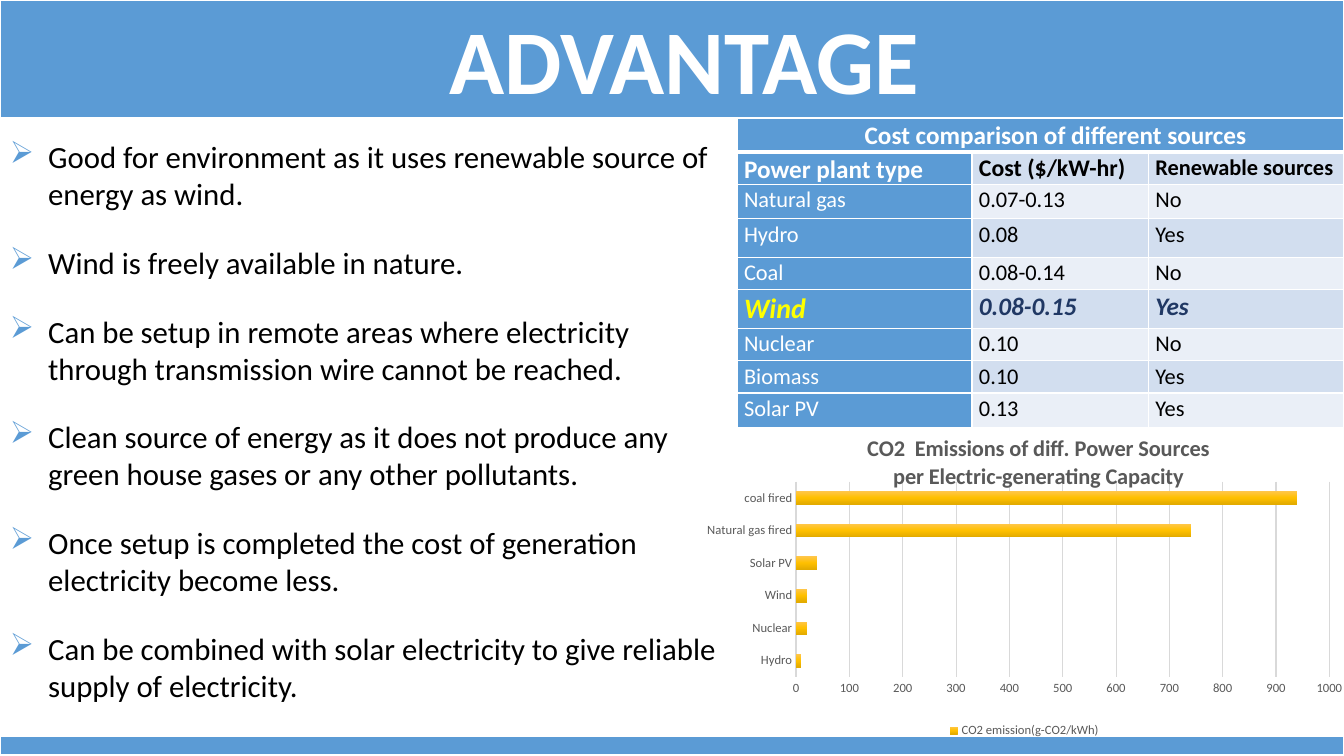
from copy import deepcopy

from lxml import etree
from pptx import Presentation
from pptx import util as u
from pptx.chart.data import CategoryChartData
from pptx.dml.color import RGBColor
from pptx.enum import chart as ch, text as tx
from pptx.oxml.ns import qn

THEME = {
    "font": "Calibri",
    "blue": "5B9BD5", "pale": "EAEFF7", "mid": "D2DEEF", "white": "FFFFFF",
    "black": "000000", "navy": "203864", "yellow": "FFFF00",
    "gray": "595959", "grid": "D9D9D9",
    "gold": [(0, "FFC64B"), (0.5, "FFC000"), (1, "E3AB00")],
    "title": 65, "body": 22, "head": 18, "cost": 17, "cell": 16,
    "wind": 20, "label": 9,
}
TITLE = "ADVANTAGE"
# Each point with the height of its box
POINTS = [
    ("Good for environment as it uses renewable source of energy as wind.", 0.84),
    ("Wind is freely available in nature.", 0.47),
    ("Can be setup in remote areas where electricity through transmission "
     "wire cannot be reached.", 0.84),
    ("Clean source of energy as it does not produce any green house gases "
     "or any other pollutants.", 0.84),
    ("Once setup is completed the cost of generation electricity become less.", 0.84),
    ("Can be combined with solar electricity to give reliable supply of "
     "electricity.", 0.84),
]
COSTS = [
    ("Cost comparison of different sources", "", ""),
    ("Power plant type", "Cost ($/kW-hr)", "Renewable sources"),
    ("Natural gas", "0.07-0.13", "No"),
    ("Hydro", "0.08", "Yes"),
    ("Coal", "0.08-0.14", "No"),
    ("Wind", "0.08-0.15", "Yes"),
    ("Nuclear", "0.10", "No"),
    ("Biomass", "0.10", "Yes"),
    ("Solar PV", "0.13", "Yes"),
]
COLS = [2.33, 1.75, 1.94]
ROWS = [0.34, 0.32, 0.34, 0.38, 0.32, 0.39, 0.32, 0.32, 0.34]
CO2_TITLE = ["CO2  Emissions of diff. Power Sources",
             "per Electric-generating Capacity"]
CO2_NAME = "CO2 emission(g-CO2/kWh)"
CO2 = {"Hydro": 10, "Nuclear": 20, "Wind": 20, "Solar PV": 40,
       "Natural gas fired": 740, "coal fired": 940}


def rgb(name):
    return RGBColor.from_string(THEME.get(name, name))


def style(font, size, color, bold=False, italic=False):
    font.name, font.size = THEME["font"], u.Pt(THEME[size])
    font.bold, font.italic = bold, italic
    font.color.rgb = rgb(color)


def edge(cell, base):
    """Draw white borders, with a bottom line of base points."""
    props = cell._tc.get_or_add_tcPr()
    for side, width in zip("LRTB", (1, 1, 1, base)):
        line = etree.SubElement(props, qn(f"a:ln{side}"), w=str(u.Pt(width)))
        fill = etree.SubElement(line, qn("a:solidFill"))
        etree.SubElement(fill, qn("a:srgbClr"), val=THEME["white"])


def paint(cell, fill, words, look, base=1, shift=0):
    """Fill a cell; shift moves centred text to the right."""
    edge(cell, base)
    cell.fill.solid()
    cell.fill.fore_color.rgb = rgb(fill)
    cell.margin_left = u.Inches(0.07 + 2 * shift)
    cell.margin_right = u.Inches(0.07)
    cell.margin_top = cell.margin_bottom = 0
    para = cell.text_frame.paragraphs[0]
    if not words:
        etree.SubElement(para._p, qn("a:endParaRPr"), sz="500")
        return
    para.text = words
    para.line_spacing = 1.07
    if shift:
        para.alignment = tx.PP_ALIGN.CENTER
    style(para.runs[0].font, *look)


def grid(slide, left, top, cols, rows):
    frame = slide.shapes.add_table(
        len(rows), len(cols), u.Inches(left), u.Inches(top),
        u.Inches(sum(cols)), u.Inches(sum(rows)))
    table = frame.table
    table.horz_banding = False
    for col, width in zip(table.columns, cols):
        col.width = u.Inches(width)
    for row, height in zip(table.rows, rows):
        row.height = u.Inches(height)
    return table


def look_for(row, col):
    """Choose the type of one cell in the cost table."""
    if row == 1:
        return [("head", "white", True), ("cost", "black", True),
                ("cell", "black", True)][col]
    if COSTS[row][0] == "Wind":
        return (("head", "navy", True, True) if col
                else ("wind", "yellow", True, True))
    return "cell", "black" if col else "white"


def add_costs(slide):
    table = grid(slide, 7.31, 1.17, COLS, ROWS)
    table.cell(0, 0).merge(table.cell(0, len(COLS) - 1))
    paint(table.cell(0, 0), "blue", COSTS[0][0], ("head", "white", True), 3, 0.15)
    for row, words in enumerate(COSTS[1:], 1):
        band = "mid" if row % 2 else "pale"
        for col, word in enumerate(words):
            paint(table.cell(row, col), band if col else "blue", word,
                  look_for(row, col))


def add_points(slide):
    top, gap = 1.32, 0.21
    for words, height in POINTS:
        box = slide.shapes.add_textbox(
            u.Inches(0), u.Inches(top), u.Inches(7.2), u.Inches(height))
        box.text_frame.word_wrap = True
        para = box.text_frame.paragraphs[0]
        para.text = words
        props = para._p.get_or_add_pPr()
        props.set("marL", str(u.Inches(0.38)))
        props.set("indent", str(u.Inches(-0.38)))
        tint = etree.SubElement(props, qn("a:buClr"))
        etree.SubElement(tint, qn("a:srgbClr"), val=THEME["blue"])
        etree.SubElement(props, qn("a:buChar"), char="➢")
        style(para.runs[0].font, "body", "black")
        top += height + gap


def place(node, after, spots):
    """Give a chart part a manual layout."""
    for old in node.findall(qn("c:layout")):
        node.remove(old)
    layout = etree.Element(qn("c:layout"))
    manual = etree.SubElement(layout, qn("c:manualLayout"))
    for tag, value in spots.items():
        etree.SubElement(manual, qn(f"c:{tag}"), val=str(value))
    if after is None:
        node.insert(0, layout)
    else:
        after.addnext(layout)


def add_chart(slide):
    data = CategoryChartData()
    data.categories = list(CO2)
    data.add_series(CO2_NAME, list(CO2.values()))
    chart = slide.shapes.add_chart(
        ch.XL_CHART_TYPE.BAR_STACKED, u.Inches(6.85), u.Inches(4.18),
        u.Inches(6.62), u.Inches(3.18), data).chart
    style(chart.font, "label", "gray")

    frame = chart.chart_title.text_frame
    frame.text = "\n".join(CO2_TITLE)
    for para in frame.paragraphs:
        para.alignment = tx.PP_ALIGN.CENTER
        style(para.runs[0].font, "cell", "gray", True)
    title = chart.chart_title._element
    place(title, title.find(qn("c:tx")),
          {"xMode": "edge", "yMode": "edge", "x": 0.26, "y": 0.03})
    place(chart._chartSpace.chart.plotArea, None,
          {"layoutTarget": "inner", "xMode": "edge", "yMode": "edge",
           "x": 0.158, "y": 0.188, "w": 0.799, "h": 0.61})

    chart.has_legend = True
    chart.legend.position = ch.XL_LEGEND_POSITION.BOTTOM
    chart.legend.include_in_layout = False
    style(chart.legend.font, "label", "gray")

    kinds, scale = chart.category_axis, chart.value_axis
    for axis in (kinds, scale):
        axis.major_tick_mark = axis.minor_tick_mark = ch.XL_TICK_MARK.NONE
        style(axis.tick_labels.font, "label", "gray")
    scale.minimum_scale, scale.maximum_scale, scale.major_unit = 0, 1000, 100
    scale.format.line.fill.background()
    scale.has_major_gridlines = True
    for line, width in ((kinds.format.line, 1),
                        (scale.major_gridlines.format.line, 0.75)):
        line.color.rgb = rgb("grid")
        line.width = u.Pt(width)

    plot = chart.plots[0]
    plot.gap_width, plot.overlap, plot.vary_by_categories = 150, 100, False
    fill = plot.series[0].format.fill
    fill.gradient()
    fill.gradient_angle = 270
    stops = plot.series[0]._element.find(".//" + qn("a:gsLst"))
    stops.append(deepcopy(stops[0]))
    for stop, (spot, color) in zip(fill.gradient_stops, THEME["gold"]):
        stop.position = spot
        stop.color.rgb = rgb(color)


def main():
    deck = Presentation()
    deck.slide_width, deck.slide_height = u.Inches(13.33), u.Inches(7.5)
    slide = deck.slides.add_slide(deck.slide_layouts[6])
    banner = grid(slide, 0, 0, [13.33], [1.15])
    paint(banner.cell(0, 0), "blue", TITLE, ("title", "white", True), 3, 0.12)
    strip = grid(slide, 0, 7.31, [13.33], [0.19])
    paint(strip.cell(0, 0), "blue", "", None, 3)
    add_points(slide)
    add_costs(slide)
    add_chart(slide)
    deck.save("out.pptx")


if __name__ == "__main__":
    main()
